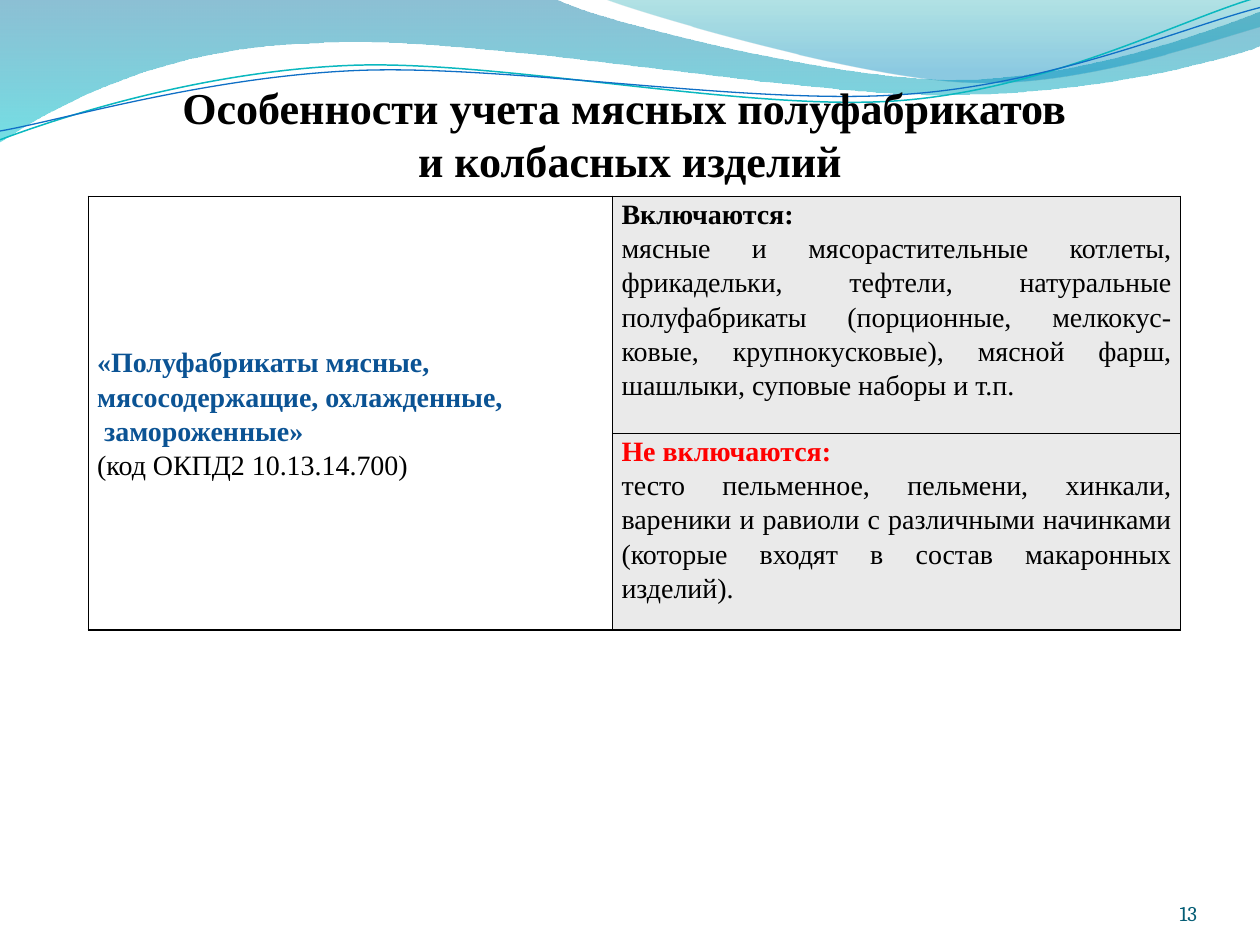
import dataclasses
import itertools

import lxml.etree
import pptx
import pptx.dml.color
import pptx.enum.text
import pptx.oxml.ns
import pptx.util

Cm = pptx.util.Cm
Pt = pptx.util.Pt
qn = pptx.oxml.ns.qn
Align = pptx.enum.text.PP_ALIGN
Anchor = pptx.enum.text.MSO_ANCHOR
sub = lxml.etree.SubElement

HUES = {
    "black": "000000", "blue": "0B5394", "red": "FF0000", "grey": "EAEAEA",
    "page": "045D75", "teal": "0AB8BF", "navy": "0F6FC6",
    "deep": "0074A1", "cyan": "00C6CF", "sea": "00A1A9", "sky": "008BBF",
}
SERIF = "Times New Roman"
UNIT = Cm(0.0254)  # wave points are hundredths of an inch


@dataclasses.dataclass
class Stop:
    hue: str
    place: float
    alpha: int


@dataclasses.dataclass
class Wave:
    start: tuple
    steps: list  # two numbers: line; six numbers: Bezier curve
    stops: tuple = ()
    line: str = ""
    width: float = 0


@dataclasses.dataclass
class Line:
    text: str
    hue: str = "black"
    bold: bool = False


def rgb(hue: str) -> pptx.dml.color.RGBColor:
    return pptx.dml.color.RGBColor.from_string(HUES[hue])


def draw_wave(slide, wave: Wave) -> None:
    """Draw an outline of lines and Bezier curves."""
    points = [p for s in wave.steps for p in zip(s[::2], s[1::2])]
    pen = slide.shapes.build_freeform(*wave.start, scale=UNIT)
    pen.add_line_segments(points, close=bool(wave.stops))
    shape = pen.convert_to_shape()
    shape.shadow.inherit = False

    # Gather each three curve points into one Bezier element
    parts = iter(list(shape._element.iter(qn("a:lnTo"))))
    for step in wave.steps:
        group = list(itertools.islice(parts, len(step) // 2))
        if len(group) == 3:
            curve = lxml.etree.Element(qn("a:cubicBezTo"))
            group[0].addprevious(curve)
            for part in group:
                curve.append(part[0])
                part.getparent().remove(part)

    if not wave.stops:
        shape.fill.background()
        shape.line.color.rgb = rgb(wave.line)
        shape.line.width = Pt(wave.width)
        return
    shape.line.fill.background()
    shape.fill.gradient()
    shape.fill.gradient_angle = 270
    for mark, stop in zip(shape.fill.gradient_stops, wave.stops):
        mark.color.rgb = rgb(stop.hue)
        mark.position = stop.place
    tints = shape._element.spPr.iter(qn("a:srgbClr"))
    for tint, stop in zip(tints, wave.stops):
        sub(tint, qn("a:alpha"), val=str(stop.alpha * 1000))


def set_font(para, size: float, hue: str, bold: bool = False,
             name: str = SERIF) -> None:
    font = para.font
    font.name, font.size, font.bold = name, Pt(size), bold
    font.color.rgb = rgb(hue)


def add_label(slide, box: tuple, align, top: float = 0):
    """Add a bottom-anchored text box and return its paragraph."""
    frame = slide.shapes.add_textbox(*map(Cm, box)).text_frame
    frame.word_wrap = True
    frame.vertical_anchor = Anchor.BOTTOM
    frame.margin_left = frame.margin_right = frame.margin_bottom = 0
    frame.margin_top = Cm(top)
    para = frame.paragraphs[0]
    para.alignment = align
    return para


def rule_cell(cell) -> None:
    props = cell._tc.get_or_add_tcPr()
    for side in ("L", "R", "T", "B"):
        edge = sub(props, qn("a:ln" + side), w=str(Pt(1)))
        fill = sub(edge, qn("a:solidFill"))
        sub(fill, qn("a:srgbClr"), val=HUES["black"])


def fill_cell(cell, lines: list, back: str = "") -> None:
    cell.margin_left = cell.margin_right = Cm(0.18)
    cell.margin_top = cell.margin_bottom = 0
    if back:
        cell.fill.solid()
        cell.fill.fore_color.rgb = rgb(back)
    else:
        cell.fill.background()
    frame = cell.text_frame
    for i, line in enumerate(lines):
        para = frame.add_paragraph() if i else frame.paragraphs[0]
        para.text = line.text
        para.alignment = Align.JUSTIFY
        para.line_spacing = 1.1
        set_font(para, 16, line.hue, line.bold)


WAVES = [
    Wave((0, 0), [
        (440, -1), (476, 17, 664, 63, 758, 63), (853, 63, 958, 26, 1000, 9),
        (1001, 36), (983, 44, 870, 76, 746, 75), (622, 75, 382, 28, 257, 34),
        (129, 36, 46, 83, -1, 113),
    ], stops=(Stop("deep", 0, 45), Stop("cyan", 1, 55))),
    Wave((479, -1), [
        (509, 11, 682, 62, 769, 65), (856, 69, 961, 32, 1000, 21), (1000, 0),
    ], stops=(Stop("sea", 0, 30), Stop("sky", 0.8, 45))),
    Wave((0, 111), [
        (48, 93, 158, 57, 277, 52), (395, 47, 593, 89, 713, 80),
        (833, 71, 938, 15, 998, -2),
    ], line="teal", width=0.85),
    Wave((0, 104), [
        (47, 96, 164, 61, 283, 56), (403, 51, 597, 84, 717, 75),
        (836, 67, 941, 21, 1000, 6),
    ], line="navy", width=0.75),
]

GOODS = [
    Line("«Полуфабрикаты мясные,", "blue", True),
    Line("мясосодержащие, охлажденные,", "blue", True),
    Line(" замороженные»", "blue", True),
    Line("(код ОКПД2 10.13.14.700)"),
]
WITH = [
    Line("Включаются:", bold=True),
    Line("мясные и мясорастительные котлеты, фрикадельки, тефтели, "
         "натуральные полуфабрикаты (порционные, мелкокус-ковые, "
         "крупнокусковые), мясной фарш, шашлыки, суповые наборы и т.п."),
]
WITHOUT = [
    Line("Не включаются:", "red", True),
    Line("тесто пельменное, пельмени, хинкали, вареники и равиоли с "
         "различными начинками (которые входят в состав макаронных "
         "изделий)."),
]


def main() -> None:
    deck = pptx.Presentation()
    deck.slide_width, deck.slide_height = Cm(25.4), Cm(19.05)
    slide = deck.slides.add_slide(deck.slide_layouts[6])

    # Waves along the top
    for wave in WAVES:
        draw_wave(slide, wave)

    # Table of goods
    wide, high = (10.57, 11.45), (4.78, 3.96)
    table = slide.shapes.add_table(2, 2, Cm(1.78), Cm(3.96),
                                   Cm(sum(wide)), Cm(sum(high))).table
    table.first_row = table.horz_banding = False
    for col, size in zip(table.columns, wide):
        col.width = Cm(size)
    for row, size in zip(table.rows, high):
        row.height = Cm(size)
    for cell in table.iter_cells():
        rule_cell(cell)
    goods = table.cell(0, 0)
    goods.merge(table.cell(1, 0))
    goods.vertical_anchor = Anchor.MIDDLE
    fill_cell(goods, GOODS)
    fill_cell(table.cell(0, 1), WITH, "grey")
    fill_cell(table.cell(1, 1), WITHOUT, "grey")

    # Title
    title = add_label(slide, (1.27, 1.98, 22.86, 1.78), Align.CENTER, 0.13)
    title.add_run().text = "Особенности учета мясных полуфабрикатов "
    title.add_line_break()
    title.add_run().text = "и колбасных изделий"
    set_font(title, 25.2, "black", True)

    # Page number
    page = add_label(slide, (22.02, 17.65, 2.11, 1.02), Align.RIGHT)
    page.text = "13"
    set_font(page, 12, "page", name="Cambria")

    deck.save("out.pptx")


if __name__ == "__main__":
    main()
